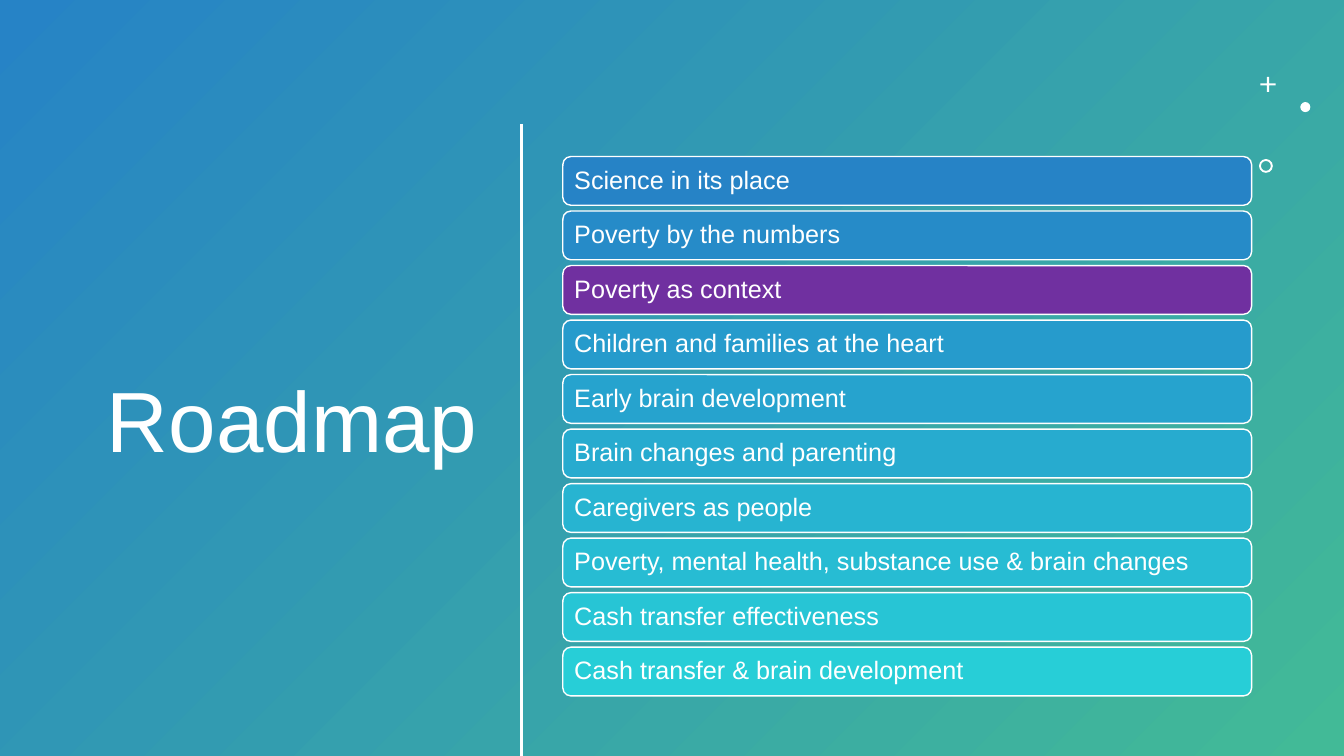
from dataclasses import dataclass

from lxml.etree import SubElement
from pptx import Presentation
from pptx.dml.color import RGBColor
from pptx.enum.shapes import MSO_CONNECTOR, MSO_SHAPE
from pptx.enum.text import MSO_ANCHOR, PP_ALIGN
from pptx.oxml.ns import qn
from pptx.util import Emu, Inches, Pt

# Grid of 160 columns by 90 rows with square cells
COLS, ROWS = 160, 90
CELL = Inches(1) / 12


@dataclass(frozen=True)
class Theme:
    font: str = "Arial"
    title_size: int = 61
    topic_size: int = 18
    white: str = "FFFFFF"
    blue: str = "2683C6"
    green: str = "42BA97"
    current: str = "7030A0"
    topic_fills: tuple[str, ...] = (
        "2683C6", "268BC8", "2693CA", "269BCC", "26A3CE",
        "27ABCF", "27B4D1", "27BCD3", "27C5D5", "27CED7",
    )


@dataclass(frozen=True)
class Box:
    col: float
    row: float
    width: float
    height: float

    def emu(self) -> list[Emu]:
        return [cells(n) for n in (self.col, self.row, self.width, self.height)]


@dataclass(frozen=True)
class Topic:
    label: str
    current: bool = False


@dataclass(frozen=True)
class Ornament:
    kind: MSO_SHAPE
    box: Box
    adjustment: float | None = None


THEME = Theme()
TITLE_BOX = Box(6.24, 13.92, 51.72, 73.32)
FIRST_TOPIC = Box(67, 18.64, 82, 5.8)
TOPIC_PITCH = 6.49

TOPICS = (
    Topic("Science in its place"),
    Topic("Poverty by the numbers"),
    Topic("Poverty as context", current=True),
    Topic("Children and families at the heart"),
    Topic("Early brain development"),
    Topic("Brain changes and parenting"),
    Topic("Caregivers as people"),
    Topic("Poverty, mental health, substance use & brain changes"),
    Topic("Cash transfer effectiveness"),
    Topic("Cash transfer & brain development"),
)

ORNAMENTS = (
    Ornament(MSO_SHAPE.CROSS, Box(150.05, 9.15, 1.8, 1.8), 0.43),
    Ornament(MSO_SHAPE.OVAL, Box(154.8, 12.15, 1.2, 1.2)),
    Ornament(MSO_SHAPE.DONUT, Box(149.88, 18.93, 1.65, 1.65), 0.14),
)


def cells(n: float) -> Emu:
    return Emu(round(n * CELL))


def color(value: str) -> RGBColor:
    return RGBColor.from_string(value)


def add_plain_shape(s, kind: MSO_SHAPE, box: Box):
    sp = s.shapes.add_shape(kind, *box.emu())
    sp.shadow.inherit = False
    sp.line.fill.background()
    return sp


def set_text(sp, text: str, size: int, align: PP_ALIGN) -> None:
    tf = sp.text_frame
    tf.word_wrap = True
    tf.vertical_anchor = MSO_ANCHOR.MIDDLE
    tf.text = text
    p = tf.paragraphs[0]
    p.alignment = align
    p.line_spacing = 0.9
    r = p.runs[0]
    r.font.name = THEME.font
    r.font.size = Pt(size)
    r.font.color.rgb = color(THEME.white)


def add_backdrop(s) -> None:
    sp = add_plain_shape(s, MSO_SHAPE.RECTANGLE, Box(0, 0, COLS, ROWS))
    sp.fill.gradient()
    sp.fill.gradient_angle = 315
    for stop, value in zip(sp.fill.gradient_stops, (THEME.blue, THEME.green)):
        stop.color.rgb = color(value)


def add_divider(s, col: float, top: float) -> None:
    line = s.shapes.add_connector(
        MSO_CONNECTOR.STRAIGHT, cells(col), cells(top), cells(col), cells(ROWS)
    )
    line.line.color.rgb = color(THEME.white)
    line.line.width = Pt(2)
    SubElement(line._element.spPr, qn("a:effectLst"))


def add_ornament(s, ornament: Ornament) -> None:
    sp = add_plain_shape(s, ornament.kind, ornament.box)
    sp.fill.solid()
    sp.fill.fore_color.rgb = color(THEME.white)
    if ornament.adjustment is not None:
        sp.adjustments[0] = ornament.adjustment


def add_topic(s, index: int, topic: Topic) -> None:
    first = FIRST_TOPIC
    box = Box(first.col, first.row + index * TOPIC_PITCH, first.width, first.height)
    sp = add_plain_shape(s, MSO_SHAPE.ROUNDED_RECTANGLE, box)
    sp.fill.solid()
    sp.fill.fore_color.rgb = color(
        THEME.current if topic.current else THEME.topic_fills[index]
    )
    sp.line.color.rgb = color(THEME.white)
    sp.line.width = Pt(1)
    tf = sp.text_frame
    tf.margin_left = tf.margin_right = Inches(0.09)
    set_text(sp, topic.label, THEME.topic_size, PP_ALIGN.LEFT)


def main() -> None:
    prs = Presentation()
    prs.slide_width, prs.slide_height = cells(COLS), cells(ROWS)
    s = prs.slides.add_slide(prs.slide_layouts[6])

    # Backdrop and title
    add_backdrop(s)
    title = s.shapes.add_textbox(*TITLE_BOX.emu())
    set_text(title, "Roadmap", THEME.title_size, PP_ALIGN.RIGHT)

    # Divider and corner ornaments
    add_divider(s, col=62.04, top=14.75)
    for ornament in ORNAMENTS:
        add_ornament(s, ornament)

    # Stack of topics
    for index, topic in enumerate(TOPICS):
        add_topic(s, index, topic)

    prs.save("out.pptx")


if __name__ == "__main__":
    main()
